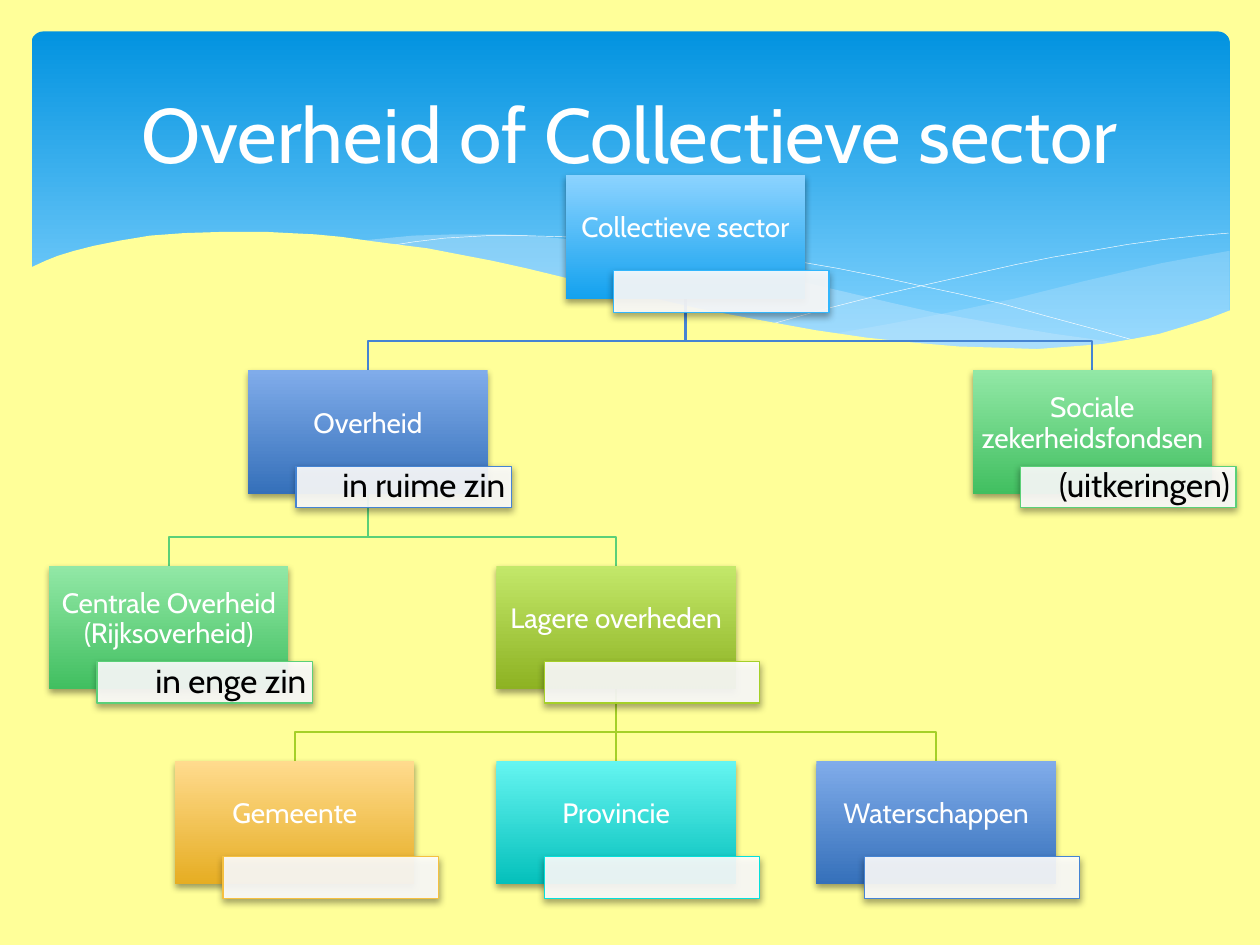
from lxml.etree import SubElement
from pptx import Presentation
from pptx.dml.color import RGBColor
from pptx.enum.shapes import MSO_CONNECTOR, MSO_SHAPE
from pptx.enum.text import MSO_ANCHOR, PP_ALIGN
from pptx.oxml.ns import qn
from pptx.util import Inches, Pt

FONT = "Cabin"
BACKGROUND = "FFFF99"
CARD_WIDTH, CARD_HEIGHT = 1.9, 0.98
CAPTION_WIDTH, CAPTION_HEIGHT = 1.71, 0.33
CAPTION_RIGHT, CAPTION_DOWN = 0.38, 0.76
TOP, LEVEL_STEP, ELBOW = 1.39, 1.55, 0.34

BLUE = ("80ACEA", "3570BA", "4584D3")
GREEN = ("92E8A6", "41BF60", "5BD078")
LINK_COLORS = {1: "4584D3", 2: "5BD078", 3: "A5D028"}

# name: (parent, level, left, caption, (gradient top, gradient bottom, outline))
CARDS = {
    "Collectieve sector": (None, 0, 4.49, "", ("8CD3FF", "14A2EF", "31B6FD")),
    "Overheid": ("Collectieve sector", 1, 1.97, "in ruime zin", BLUE),
    "Centrale Overheid (Rijksoverheid)": ("Overheid", 2, 0.39, "in enge zin", GREEN),
    "Lagere overheden": ("Overheid", 2, 3.94, "", ("C3E86A", "8DB222", "A5D028")),
    "Gemeente": ("Lagere overheden", 3, 1.39, "", ("FFDB8E", "E6AD22", "F5C040")),
    "Provincie": ("Lagere overheden", 3, 3.94, "", ("65F5F1", "04C0BB", "05E0DB")),
    "Waterschappen": ("Lagere overheden", 3, 6.48, "", BLUE),
    "Sociale zekerheidsfondsen": ("Collectieve sector", 1, 7.72, "(uitkeringen)", GREEN),
}

RIGHT_WAVE = [
    (9.76, 1.99), (9.48, 2.04), (9.21, 2.09), (8.91, 2.16), (8.61, 2.23), (8.05, 2.37),
    (7.53, 2.48), (7.06, 2.57), (6.61, 2.65), (6.91, 2.69), (7.18, 2.72), (7.45, 2.75),
    (7.69, 2.77), (8.03, 2.78), (8.35, 2.77), (8.63, 2.75), (8.89, 2.72), (9.13, 2.67),
    (9.35, 2.61), (9.63, 2.52), (9.76, 2.47),
]
MIDDLE_WAVE = [
    (8.93, 2.73), (8.66, 2.69), (8.37, 2.65), (8.07, 2.6), (7.75, 2.54), (7.41, 2.48),
    (7.06, 2.4), (6.68, 2.31), (6.29, 2.22), (5.98, 2.14), (5.69, 2.08), (5.41, 2.03),
    (5.14, 1.98), (4.89, 1.94), (4.65, 1.91), (4.42, 1.89), (4.2, 1.87), (3.99, 1.86),
    (3.61, 1.86), (3.28, 1.87), (2.86, 1.91), (3.23, 1.96), (3.62, 2.03), (4.04, 2.11),
    (4.49, 2.22), (4.91, 2.32), (5.3, 2.4), (5.66, 2.48), (6.01, 2.55), (6.34, 2.61),
    (6.65, 2.66), (6.95, 2.7), (7.22, 2.74), (7.48, 2.76), (7.85, 2.78), (8.28, 2.78),
    (8.57, 2.77), (8.93, 2.73),
]
FALLING_CURVE = [
    (3.09, 1.95), (3.28, 1.92), (3.53, 1.89), (3.87, 1.87), (4.16, 1.87), (4.5, 1.88),
    (4.89, 1.9), (5.33, 1.94), (5.82, 2), (6.36, 2.08), (6.65, 2.13), (6.95, 2.19),
    (7.27, 2.26), (7.6, 2.33), (7.95, 2.41), (8.31, 2.51), (8.68, 2.61), (9.07, 2.72),
]
RISING_CURVE = [
    (6.13, 2.57), (6.52, 2.46), (6.95, 2.35), (7.48, 2.23), (8.06, 2.1), (8.36, 2.04),
    (8.66, 1.99), (8.95, 1.94), (9.24, 1.9), (9.51, 1.87), (9.75, 1.85),
]
LOWER_WAVE = [
    (9.77, 2.46), (9.59, 2.53), (9.4, 2.59), (9.2, 2.65), (8.99, 2.69), (8.75, 2.73),
    (8.5, 2.75), (8.23, 2.77), (7.93, 2.76), (7.61, 2.75), (7.26, 2.72), (6.88, 2.68),
    (6.47, 2.62), (6.03, 2.54), (5.55, 2.45), (5.03, 2.33), (4.47, 2.2), (4.18, 2.13),
    (3.91, 2.07), (3.65, 2.02), (3.39, 1.97), (3.15, 1.94), (2.92, 1.91), (2.71, 1.88),
    (2.5, 1.86), (2.3, 1.85), (2.11, 1.84), (1.77, 1.84), (1.46, 1.85), (1.19, 1.87),
    (0.95, 1.91), (0.75, 1.95), (0.59, 1.99), (0.46, 2.03), (0.36, 2.07), (0.23, 2.13),
    (0.23, 3.29), (9.77, 3.29),
]
WAVES = [
    (RIGHT_WAVE, "C6E7FC", 29, None),
    (MIDDLE_WAVE, "C6E7FC", 40, None),
    (FALLING_CURVE, None, 100, "FFFFFF"),
    (RISING_CURVE, None, 100, "FFFFFF"),
    (LOWER_WAVE, BACKGROUND, 100, None),
]


def color(value):
    """Turn a hex string into a colour."""
    return RGBColor.from_string(value)


def paint(shape, fill=None, opacity=100, line=None, width=0.75):
    """Set a shape's solid fill, opacity and outline, without a shadow."""
    shape.shadow.inherit = False
    if fill:
        shape.fill.solid()
        shape.fill.fore_color.rgb = color(fill)
        if opacity < 100:
            solid = shape._element.spPr.find(qn("a:solidFill"))
            SubElement(solid[0], qn("a:alpha"), val=str(opacity * 1000))
    else:
        shape.fill.background()
    if line:
        shape.line.color.rgb = color(line)
        shape.line.width = Pt(width)
    else:
        shape.line.fill.background()


def shade(shape, top, bottom, end=1.0):
    """Fill a shape with a gradient that runs downwards."""
    shape.fill.gradient()
    shape.fill.gradient_angle = 270
    first, last = shape.fill.gradient_stops
    first.color.rgb, last.color.rgb = color(top), color(bottom)
    first.position, last.position = 0, end


def add_shadow(shape):
    """Give a shape a soft shadow below it."""
    effects = shape._element.spPr.find(qn("a:effectLst"))
    shadow = SubElement(effects, qn("a:outerShdw"), blurRad=str(Pt(4)), dist=str(Pt(2)),
                        dir="5400000", rotWithShape="0")
    black = SubElement(shadow, qn("a:srgbClr"), val="000000")
    SubElement(black, qn("a:alpha"), val="38000")


def add_box(slide, left, top, width, height, kind=MSO_SHAPE.RECTANGLE):
    """Add a preset shape placed in inches."""
    return slide.shapes.add_shape(kind, *map(Inches, (left, top, width, height)))


def add_path(slide, points, closed):
    """Add a freeform through points given in inches."""
    start, *rest = [(Inches(x), Inches(y)) for x, y in points]
    builder = slide.shapes.build_freeform(*start)
    builder.add_line_segments(rest, close=closed)
    return builder.convert_to_shape()


def write(shape, text, size, ink, align, side, bottom):
    """Write one formatted paragraph in a box."""
    frame = shape.text_frame
    frame.word_wrap = True
    frame.vertical_anchor = MSO_ANCHOR.MIDDLE
    frame.margin_left = frame.margin_right = Inches(side)
    frame.margin_top, frame.margin_bottom = Inches(0.01), Inches(bottom)
    frame.text = text
    paragraph = frame.paragraphs[0]
    paragraph.alignment = align
    paragraph.line_spacing = 0.9
    paragraph.font.name = FONT
    paragraph.font.size = Pt(size)
    paragraph.font.color.rgb = color(ink)


def add_link(slide, parent, child):
    """Join a parent card to a child card."""
    _, parent_level, parent_left, _, _ = CARDS[parent]
    _, level, left, _, _ = CARDS[child]
    start_x, end_x = parent_left + CARD_WIDTH / 2, left + CARD_WIDTH / 2
    start_y = TOP + parent_level * LEVEL_STEP + CARD_HEIGHT
    end_y = TOP + level * LEVEL_STEP
    if start_x == end_x:
        link = slide.shapes.add_connector(
            MSO_CONNECTOR.STRAIGHT, *map(Inches, (start_x, start_y, end_x, end_y)))
        SubElement(link._element.spPr, qn("a:effectLst"))
        link.line.color.rgb = color(LINK_COLORS[level])
        link.line.width = Pt(1.25)
    else:
        bend = start_y + ELBOW
        points = [(start_x, start_y), (start_x, bend), (end_x, bend), (end_x, end_y)]
        paint(add_path(slide, points, False), line=LINK_COLORS[level], width=1.25)


def add_card(slide, name, level, left, caption, colors):
    """Add a card with its caption strip."""
    top = TOP + level * LEVEL_STEP
    card = add_box(slide, left, top, CARD_WIDTH, CARD_HEIGHT)
    paint(card)
    shade(card, *colors[:2])
    add_shadow(card)
    write(card, name, 16, "FFFFFF", PP_ALIGN.CENTER, 0.01, 0.14)
    strip = add_box(slide, left + CAPTION_RIGHT, top + CAPTION_DOWN, CAPTION_WIDTH, CAPTION_HEIGHT)
    paint(strip, "FFFFFF", 90, colors[2])
    add_shadow(strip)
    if caption:
        write(strip, caption, 19, "000000", PP_ALIGN.RIGHT, 0.05, 0.01)


def main():
    """Build the slide and save it."""
    presentation = Presentation()
    presentation.slide_width, presentation.slide_height = Inches(10), Inches(7.5)
    slide = presentation.slides.add_slide(presentation.slide_layouts[5])
    slide.background.fill.solid()
    slide.background.fill.fore_color.rgb = color(BACKGROUND)

    header = add_box(slide, 0.25, 0.25, 9.51, 2.7, MSO_SHAPE.ROUNDED_RECTANGLE)
    header.adjustments[0] = 0.034
    paint(header)
    shade(header, "0293E0", "83D3FE", 0.9)
    for points, fill, opacity, line in WAVES:
        paint(add_path(slide, points, bool(fill)), fill, opacity, line, 0.25)

    for name, (parent, *_) in CARDS.items():
        if parent:
            add_link(slide, parent, name)
    for name, (_, *details) in CARDS.items():
        add_card(slide, name, *details)

    title = slide.shapes.title
    title.left, title.top, title.width, title.height = map(Inches, (0.5, 0.37, 9, 1.37))
    write(title, "Overheid of Collectieve sector", 44, "FFFFFF", PP_ALIGN.CENTER, 0.1, 0.01)
    title.text_frame.paragraphs[0].line_spacing = 1.0
    slide.shapes._spTree.append(title._element)
    presentation.save("out.pptx")


if __name__ == "__main__":
    main()
